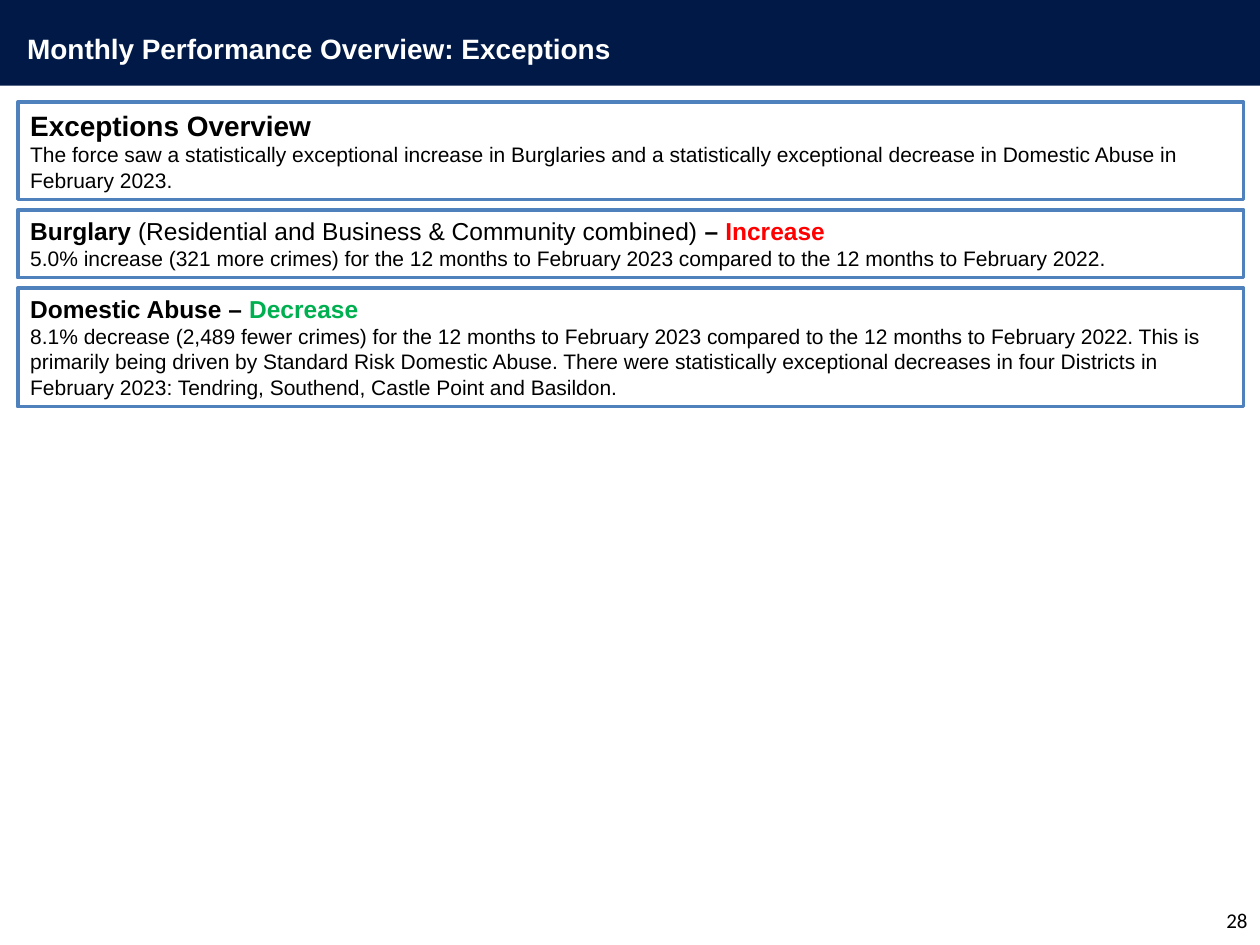
"""Build the monthly performance exceptions slide."""
from dataclasses import dataclass

from pptx import Presentation, util as u
from pptx.dml.color import RGBColor
from pptx.enum import shapes, text


@dataclass(frozen=True)
class Theme:
    navy: str = "001947"
    border: str = "4F81BD"
    white: str = "FFFFFF"
    black: str = "000000"
    rise: str = "FF0000"
    fall: str = "00B050"
    font: str = "Arial"
    number_font: str = "Calibri"
    title: int = 16
    heading: int = 14
    body: int = 12


THEME = Theme()
TITLE = "Monthly Performance Overview: Exceptions"
PAGE_NUMBER = "28"
PANELS = [
    {
        "height": 1.96,
        "size": THEME.title,
        "heading": [("Exceptions Overview", True, THEME.black)],
        "detail": "The force saw a statistically exceptional increase in Burglaries and a "
                  "statistically exceptional decrease in Domestic Abuse in February 2023.",
    },
    {
        "height": 1.37,
        "size": THEME.heading,
        "heading": [
            ("Burglary ", True, THEME.black),
            ("(Residential and Business & Community combined)", False, THEME.black),
            (" – ", True, THEME.black),
            ("Increase", True, THEME.rise),
        ],
        "detail": "5.0% increase (321 more crimes) for the 12 months to February 2023 "
                  "compared to the 12 months to February 2022.",
    },
    {
        "height": 2.39,
        "size": THEME.heading,
        "heading": [
            ("Domestic Abuse – ", True, THEME.black),
            ("Decrease", True, THEME.fall),
        ],
        "detail": "8.1% decrease (2,489 fewer crimes) for the 12 months to February 2023 "
                  "compared to the 12 months to February 2022. This is primarily being driven "
                  "by Standard Risk Domestic Abuse. There were statistically exceptional "
                  "decreases in four Districts in February 2023: Tendring, Southend, "
                  "Castle Point and Basildon.",
    },
]
PANEL_LEFT, PANEL_TOP, PANEL_WIDTH, PANEL_GAP = 0.36, 2.06, 24.71, 0.21


def write(paragraph, pieces, size, font=THEME.font, align=text.PP_ALIGN.LEFT):
    paragraph.alignment = align
    for words, bold, colour in pieces:
        run = paragraph.add_run()
        run.text = words
        run.font.name = font
        run.font.size = u.Pt(size)
        run.font.bold = bold
        run.font.color.rgb = RGBColor.from_string(colour)


def add_rectangle(slide, box, fill, border=None):
    rectangle = slide.shapes.add_shape(shapes.MSO_SHAPE.RECTANGLE, *map(u.Cm, box))
    rectangle.shadow.inherit = False
    rectangle.fill.solid()
    rectangle.fill.fore_color.rgb = RGBColor.from_string(fill)
    if border:
        rectangle.line.color.rgb = RGBColor.from_string(border)
        rectangle.line.width = u.Pt(2)
    else:
        rectangle.line.fill.background()
    return rectangle


def add_label(slide, box, anchor):
    label = slide.shapes.add_textbox(*map(u.Cm, box)).text_frame
    label.word_wrap = True
    label.vertical_anchor = anchor
    return label


def add_panel(slide, panel, top):
    box = (PANEL_LEFT, top, PANEL_WIDTH, panel["height"])
    body = add_rectangle(slide, box, THEME.white, THEME.border).text_frame
    body.word_wrap = True
    body.auto_size = text.MSO_AUTO_SIZE.SHAPE_TO_FIT_TEXT
    body.vertical_anchor = text.MSO_ANCHOR.TOP
    write(body.paragraphs[0], panel["heading"], panel["size"])
    write(body.add_paragraph(), [(panel["detail"], False, THEME.black)], THEME.body)


def main():
    deck = Presentation()
    deck.slide_width, deck.slide_height = u.Cm(25.4), u.Cm(19.05)
    slide = deck.slides.add_slide(deck.slide_layouts[6])

    add_rectangle(slide, (0, -0.18, 25.4, 1.91), THEME.navy)
    title = add_label(slide, (0.3, 0.51, 14.4, 0.94), text.MSO_ANCHOR.TOP)
    write(title.paragraphs[0], [(TITLE, True, THEME.white)], THEME.title)
    number = add_label(slide, (19.48, 18.03, 5.92, 1.02), text.MSO_ANCHOR.MIDDLE)
    write(number.paragraphs[0], [(PAGE_NUMBER, False, THEME.black)], THEME.body,
          THEME.number_font, text.PP_ALIGN.RIGHT)

    top = PANEL_TOP
    for panel in PANELS:
        add_panel(slide, panel, top)
        top += panel["height"] + PANEL_GAP

    deck.save("out.pptx")


if __name__ == "__main__":
    main()
